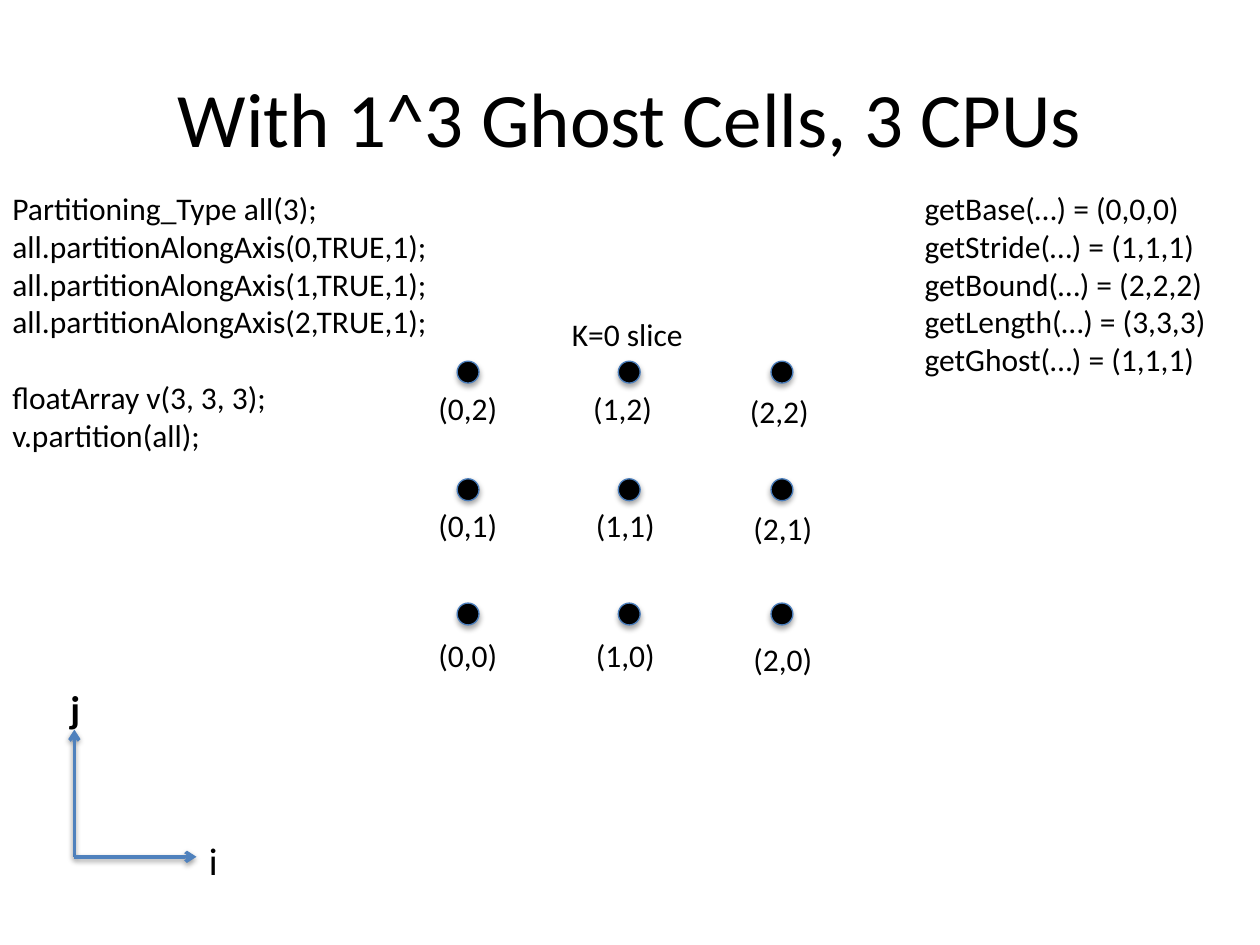
import pptx
import pptx.dml.color
import pptx.enum.shapes
import pptx.enum.text
import pptx.oxml
import pptx.oxml.ns
import pptx.util

Pt = pptx.util.Pt
FONT = "Calibri"
BLACK = "000000"
AXIS_BLUE = "4F81BD"
DOT_OUTLINE = "4B7EBC"

DOT_SIZE = 12.5
DOT_LEFTS = (261.2, 353.3, 440.6)      # by i
DOT_TOPS = (344.6, 273.6, 206.4)       # by j
LABEL_LEFTS = (243.4, 333.4, 423.4)    # by i
LABEL_TOPS = (360.2, 285.8, 218.9)     # by j
LABEL_SHIFTS = {(1, 2): (-1.5, 0), (2, 0): (0, 2), (2, 1): (0, 1.5), (2, 2): (-2, 1.5)}

CODE = [
    "Partitioning_Type all(3);",
    *(f"all.partitionAlongAxis({axis},TRUE,1);" for axis in range(3)),
    "floatArray v(3, 3, 3);",
    "v.partition(all);",
]
RESULTS = [
    "getBase(…) = (0,0,0)",
    "getStride(…) = (1,1,1)",
    "getBound(…) = (2,2,2)",
    "getLength(…) = (3,3,3)",
    "getGhost(…) = (1,1,1)",
]


def rgb(color):
    return pptx.dml.color.RGBColor.from_string(color)


def format_run(r, size=18, bold=False, color=BLACK):
    r.font.name = FONT
    r.font.size = Pt(size)
    r.font.bold = bold
    r.font.color.rgb = rgb(color)


def add_text(s, lines, left, top, width, height, **style):
    """Add a non-wrapping text box, one paragraph per line."""
    sp = s.shapes.add_textbox(Pt(left), Pt(top), Pt(width), Pt(height))
    tf = sp.text_frame
    tf.word_wrap = False
    tf.auto_size = pptx.enum.text.MSO_AUTO_SIZE.SHAPE_TO_FIT_TEXT
    for n, line in enumerate(lines):
        p = tf.paragraphs[0] if n == 0 else tf.add_paragraph()
        r = p.add_run()
        r.text = line
        format_run(r, **style)
    return tf


def add_shadow(sp, distance, opacity):
    """Drop a soft black shadow straight down; call after the line is set."""
    sp._element.spPr.append(pptx.oxml.parse_xml(
        f'<a:effectLst {pptx.oxml.ns.nsdecls("a")}>'
        f'<a:outerShdw blurRad="{Pt(3.1)}" dist="{Pt(distance)}" dir="5400000" rotWithShape="0">'
        f'<a:srgbClr val="{BLACK}"><a:alpha val="{opacity * 1000}"/></a:srgbClr>'
        '</a:outerShdw></a:effectLst>'))


def add_arrow(s, x1, y1, x2, y2):
    sp = s.shapes.add_connector(
        pptx.enum.shapes.MSO_CONNECTOR.STRAIGHT, Pt(x1), Pt(y1), Pt(x2), Pt(y2))
    sp.line.color.rgb = rgb(AXIS_BLUE)
    sp.line.width = Pt(2)
    sp.line._get_or_add_ln().append(pptx.oxml.parse_xml(
        f'<a:tailEnd {pptx.oxml.ns.nsdecls("a")} type="arrow"/>'))
    add_shadow(sp, 1.6, 38)


def add_dot(s, left, top):
    sp = s.shapes.add_shape(
        pptx.enum.shapes.MSO_SHAPE.OVAL, Pt(left), Pt(top), Pt(DOT_SIZE), Pt(DOT_SIZE))
    sp.fill.solid()
    sp.fill.fore_color.rgb = rgb(BLACK)
    sp.line.color.rgb = rgb(DOT_OUTLINE)
    sp.line.width = Pt(0.75)
    add_shadow(sp, 1.8, 35)


def add_title(s, text):
    sp = s.shapes.title
    sp.left, sp.top, sp.width, sp.height = Pt(36), Pt(21.6), Pt(648), Pt(90)
    tf = sp.text_frame
    tf.vertical_anchor = pptx.enum.text.MSO_ANCHOR.MIDDLE
    p = tf.paragraphs[0]
    p.alignment = pptx.enum.text.PP_ALIGN.CENTER
    r = p.add_run()
    r.text = text
    format_run(r, size=44)


def add_axes(s):
    x, y = 42.5, 489.6
    add_arrow(s, x, y, x, 416.9)
    add_arrow(s, x, y, 112.3, y)
    add_text(s, ["i"], 112.3, 474.5, 19.4, 33.8, size=22)
    add_text(s, ["j"], 33.1, 388.1, 20.2, 33.8, size=22, bold=True)


def add_grid(s):
    add_text(s, ["K=0 slice"], 319.7, 176.4, 78.5, 28.8)
    for i in range(3):
        for j in range(3):
            add_dot(s, DOT_LEFTS[i], DOT_TOPS[j])
            dx, dy = LABEL_SHIFTS.get((i, j), (0, 0))
            add_text(s, [f"({i},{j})"], LABEL_LEFTS[i] + dx, LABEL_TOPS[j] + dy, 48.2, 28.8)


def main():
    prs = pptx.Presentation()
    prs.slide_width, prs.slide_height = Pt(720), Pt(540)
    s = prs.slides.add_slide(prs.slide_layouts[5])
    add_title(s, "With 1^3 Ghost Cells, 3 CPUs")
    add_axes(s)
    add_text(s, RESULTS, 521.3, 104.4, 176.4, 116.6)
    tf = add_text(s, CODE, 0, 104.4, 253.4, 159.8)
    tf.paragraphs[4].space_before = Pt(21.6)
    add_grid(s)
    prs.save("out.pptx")


if __name__ == "__main__":
    main()
